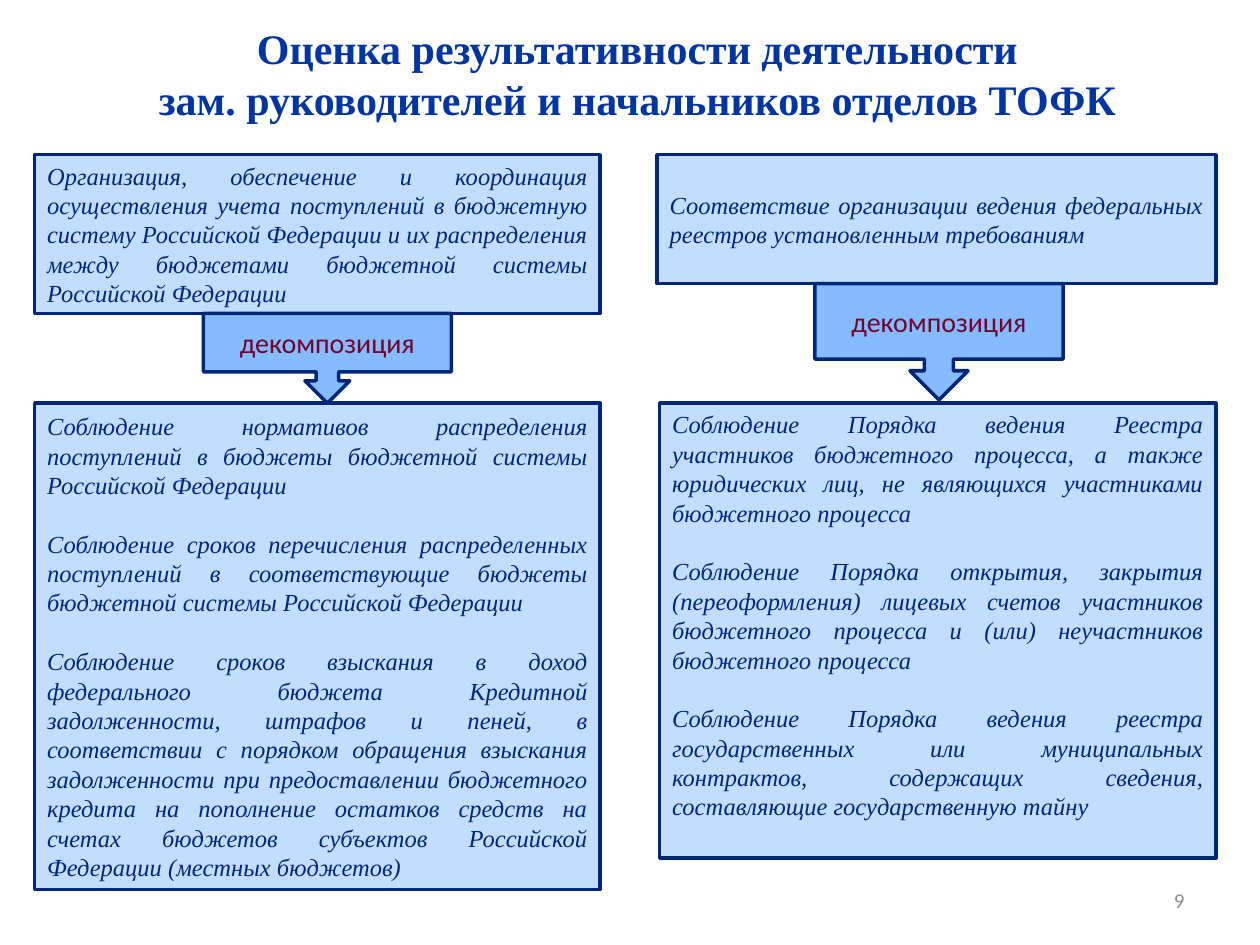
from dataclasses import dataclass

from pptx import Presentation
from pptx.dml.color import RGBColor
from pptx.enum import shapes, text
from pptx.util import Cm, Pt


@dataclass(frozen=True)
class Theme:
    title_color: RGBColor = RGBColor.from_string("00349E")
    ink: RGBColor = RGBColor.from_string("002776")
    panel: RGBColor = RGBColor.from_string("C3DDFF")
    callout: RGBColor = RGBColor.from_string("87BBFF")
    callout_ink: RGBColor = RGBColor.from_string("72002C")
    number_ink: RGBColor = RGBColor.from_string("8C8C8C")
    serif: str = "Times New Roman"
    sans: str = "Calibri"
    title_size: Pt = Pt(24)
    body_size: Pt = Pt(14)
    callout_size: Pt = Pt(16)
    number_size: Pt = Pt(12)
    gap: Pt = Pt(16.7)
    outline: Pt = Pt(2)


THEME = Theme()

TITLE = [
    "Оценка результативности деятельности",
    "зам. руководителей и начальников отделов ТОФК",
]
REVENUE_GOAL = [
    "Организация, обеспечение и координация осуществления учета поступлений "
    "в бюджетную систему Российской Федерации и их распределения между "
    "бюджетами бюджетной системы Российской Федерации",
]
REVENUE_MEASURES = [
    "Соблюдение нормативов распределения поступлений в бюджеты бюджетной "
    "системы Российской Федерации",
    "Соблюдение сроков перечисления распределенных поступлений в "
    "соответствующие бюджеты бюджетной системы Российской Федерации",
    "Соблюдение сроков взыскания в доход федерального бюджета Кредитной "
    "задолженности, штрафов и пеней, в соответствии с порядком обращения "
    "взыскания задолженности при предоставлении бюджетного кредита на "
    "пополнение остатков средств на счетах бюджетов субъектов Российской "
    "Федерации (местных бюджетов)",
]
REGISTRY_GOAL = [
    "Соответствие организации ведения федеральных реестров установленным "
    "требованиям",
]
REGISTRY_MEASURES = [
    "Соблюдение Порядка ведения Реестра участников бюджетного процесса, а "
    "также юридических лиц, не являющихся участниками бюджетного процесса",
    "Соблюдение Порядка открытия, закрытия (переоформления) лицевых счетов "
    "участников бюджетного процесса и (или) неучастников бюджетного процесса",
    "Соблюдение Порядка ведения реестра государственных или муниципальных "
    "контрактов, содержащих сведения, составляющие государственную тайну",
]


def write(frame, lines, align, font, size, color,
          bold=False, italic=False, gap=Pt(0), anchor=text.MSO_ANCHOR.MIDDLE):
    frame.word_wrap = True
    frame.auto_size = text.MSO_AUTO_SIZE.NONE
    frame.vertical_anchor = anchor
    frame.text = "\n".join(lines)
    for index, paragraph in enumerate(frame.paragraphs):
        paragraph.alignment = align
        if index:
            paragraph.space_before = gap
        paragraph.font.name = font
        paragraph.font.size = size
        paragraph.font.color.rgb = color
        paragraph.font.bold = bold
        paragraph.font.italic = italic


def add_title(slide):
    title = slide.shapes.title
    title.left, title.top = Cm(0.3), Cm(0.33)
    title.width, title.height = Cm(25.1), Cm(2.31)
    write(title.text_frame, TITLE, text.PP_ALIGN.CENTER, THEME.serif,
          THEME.title_size, THEME.title_color, bold=True,
          anchor=text.MSO_ANCHOR.TOP)


def add_outlined(slide, preset, left, top, width, height, fill):
    shape = slide.shapes.add_shape(preset, Cm(left), Cm(top), Cm(width), Cm(height))
    shape.shadow.inherit = False
    shape.fill.solid()
    shape.fill.fore_color.rgb = fill
    shape.line.color.rgb = THEME.ink
    shape.line.width = THEME.outline
    return shape


def add_panel(slide, left, top, width, height, lines, anchor=text.MSO_ANCHOR.MIDDLE):
    panel = add_outlined(slide, shapes.MSO_SHAPE.RECTANGLE,
                         left, top, width, height, THEME.panel)
    write(panel.text_frame, lines, text.PP_ALIGN.JUSTIFY, THEME.serif,
          THEME.body_size, THEME.ink, italic=True, gap=THEME.gap, anchor=anchor)


def add_decomposition(slide, left, top, height):
    callout = add_outlined(slide, shapes.MSO_SHAPE.DOWN_ARROW_CALLOUT,
                           left, top, 5, height, THEME.callout)
    write(callout.text_frame, ["декомпозиция"], text.PP_ALIGN.CENTER,
          THEME.sans, THEME.callout_size, THEME.callout_ink)


def add_page_number(slide, number):
    box = slide.shapes.add_textbox(Cm(18.2), Cm(17.65), Cm(5.93), Cm(1.01))
    write(box.text_frame, [number], text.PP_ALIGN.RIGHT, THEME.sans,
          THEME.number_size, THEME.number_ink)


def main():
    deck = Presentation()
    deck.slide_width, deck.slide_height = Cm(25.4), Cm(19.05)
    slide = deck.slides.add_slide(deck.slide_layouts.get_by_name("Title Only"))

    goal_top, measures_top = 3.12, 8.13
    add_title(slide)

    add_panel(slide, 0.7, goal_top, 11.4, 3.2, REVENUE_GOAL)
    add_panel(slide, 0.7, measures_top, 11.4, 9.8, REVENUE_MEASURES)
    add_decomposition(slide, 4.1, goal_top + 3.2, 1.81)

    add_panel(slide, 13.25, goal_top, 11.26, 2.6, REGISTRY_GOAL)
    add_panel(slide, 13.3, measures_top, 11.21, 9.17, REGISTRY_MEASURES,
              anchor=text.MSO_ANCHOR.TOP)
    add_decomposition(slide, 16.43, goal_top + 2.6, 2.34)

    add_page_number(slide, "9")
    deck.save("out.pptx")


if __name__ == "__main__":
    main()
